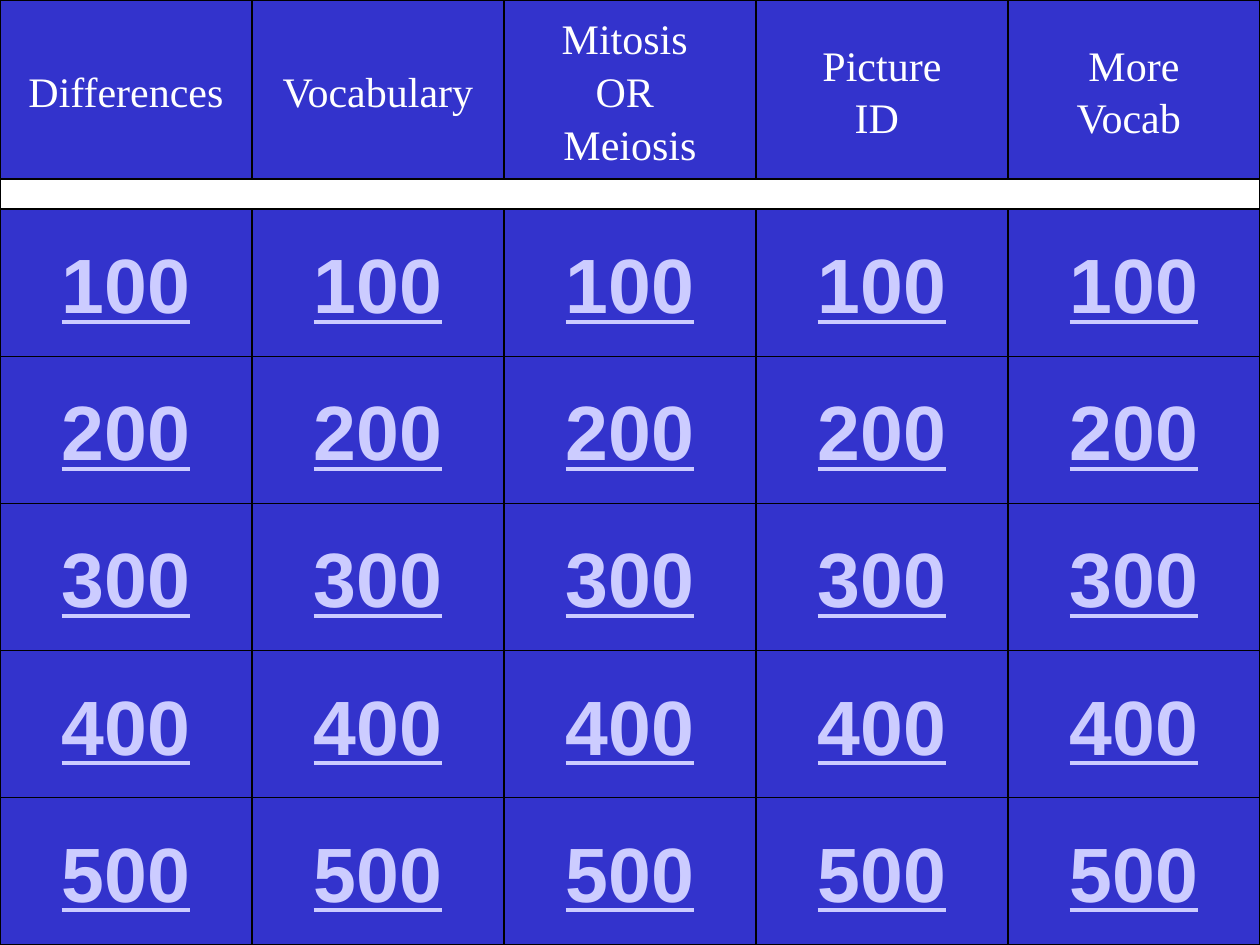
"""Build a quiz board with five topics and five rows of point values."""
from dataclasses import dataclass

from pptx import Presentation
from pptx.dml.color import RGBColor
from pptx.enum.shapes import MSO_SHAPE
from pptx.enum.text import MSO_ANCHOR, PP_ALIGN
from pptx.util import Inches, Pt

RECT = MSO_SHAPE.RECTANGLE
MIDDLE = MSO_ANCHOR.MIDDLE
CENTER = PP_ALIGN.CENTER

BLUE = RGBColor(0x33, 0x33, 0xCC)
WHITE = RGBColor(0xFF, 0xFF, 0xFF)
BLACK = RGBColor(0x00, 0x00, 0x00)
LILAC = RGBColor(0xCC, 0xCC, 0xFF)

WIDE, HIGH = 10, 7.5
HEAD, BAR, TOP = 1.42, 0.25, 1.66
TOPICS = ["Differences", "Vocabulary", "Mitosis \nOR \nMeiosis",
          "Picture\nID ", "More\nVocab "]
POINTS = [100, 200, 300, 400, 500]
COL = WIDE / len(TOPICS)
ROW = (HIGH - TOP) / len(POINTS)


@dataclass(frozen=True)
class Style:
    """Font values and line spacing of a kind of cell."""
    font: dict
    space: float = 1.0


TOPIC = Style({"name": "Times New Roman", "size": Pt(24)}, 1.05)
POINT = Style({"name": "Arial", "size": Pt(44), "bold": True, "underline": True})


@dataclass(frozen=True)
class Box:
    """A filled rectangle measured in inches."""
    left: float
    top: float
    width: float
    height: float
    fill: RGBColor = BLUE


def draw_box(slide, box: Box):
    """Draw an outlined rectangle and return it."""
    shape = slide.shapes.add_shape(
        RECT, *map(Inches, (box.left, box.top, box.width, box.height)))
    shape.shadow.inherit = False
    shape.fill.solid()
    shape.fill.fore_color.rgb = box.fill
    shape.line.color.rgb = BLACK
    shape.line.width = Pt(0.75)
    return shape


def draw_cell(slide, box: Box, text: str, style: Style, color: RGBColor) -> None:
    """Draw a rectangle with centred text."""
    frame = draw_box(slide, box).text_frame
    frame.word_wrap = False
    frame.vertical_anchor = MIDDLE
    para = frame.paragraphs[0]
    para.text = text
    para.alignment = CENTER
    para.line_spacing = style.space
    for run in para.runs:
        for key, value in style.font.items():
            setattr(run.font, key, value)
        run.font.color.rgb = color


def main() -> None:
    """Build and save the board."""
    deck = Presentation()
    deck.slide_width, deck.slide_height = Inches(WIDE), Inches(HIGH)
    slide = deck.slides.add_slide(deck.slide_layouts[6])
    slide.background.fill.solid()
    slide.background.fill.fore_color.rgb = BLUE

    for col, topic in enumerate(TOPICS):
        draw_cell(slide, Box(col * COL, 0, COL, HEAD), topic, TOPIC, WHITE)
    draw_box(slide, Box(0, HEAD, WIDE, BAR, WHITE))
    for row, point in enumerate(POINTS):
        for col in range(len(TOPICS)):
            box = Box(col * COL, TOP + row * ROW, COL, ROW)
            draw_cell(slide, box, str(point), POINT, LILAC)

    deck.save("out.pptx")


if __name__ == "__main__":
    main()
